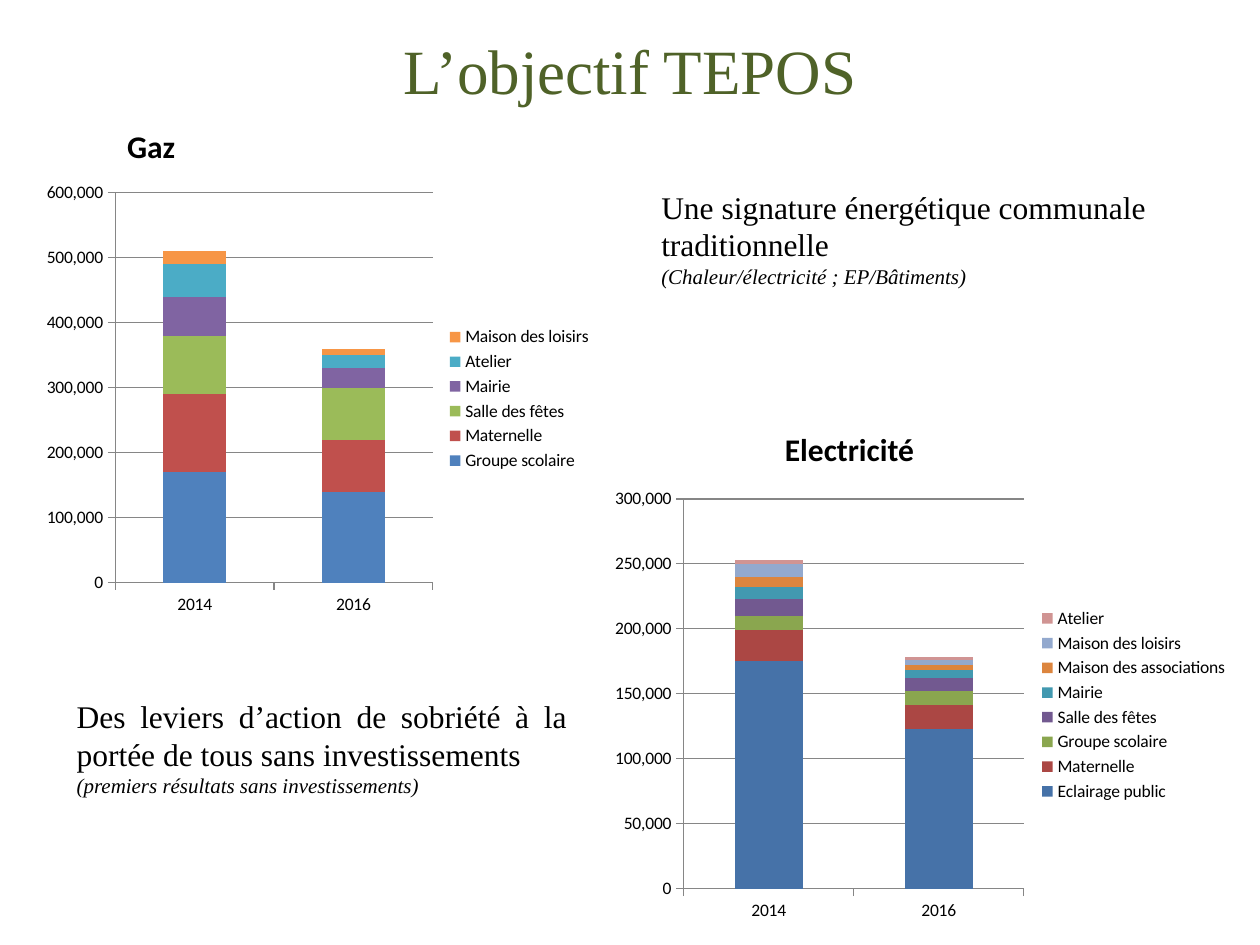
from pptx import Presentation
from pptx import util as u
from pptx.chart import data as chart_data
from pptx.dml import color
from pptx.enum import chart as chart_enum
from pptx.enum import text

COLORS = {
    "title": "4F6228", "text": "000000", "axis": "868686",
    "blue": "4F81BD", "red": "C0504D", "green": "9BBB59",
    "purple": "8064A2", "teal": "4BACC6", "orange": "F79646",
    "dark blue": "4672A8", "dark red": "AB4744", "dark green": "8AA64F",
    "dark purple": "725990", "dark teal": "4299B0", "dark orange": "DC853E",
    "pale blue": "93A9CE", "pale red": "D09493",
}
SERIF, SANS = "Times New Roman", "Calibri"
YEARS = ["2014", "2016"]

# Consumption per building: name, values by year, colour
GAS = [
    ("Groupe scolaire", (170000, 140000), "blue"),
    ("Maternelle", (120000, 80000), "red"),
    ("Salle des fêtes", (90000, 80000), "green"),
    ("Mairie", (60000, 30000), "purple"),
    ("Atelier", (50000, 20000), "teal"),
    ("Maison des loisirs", (20000, 10000), "orange"),
]
ELECTRICITY = [
    ("Eclairage public", (175000, 123000), "dark blue"),
    ("Maternelle", (24000, 18000), "dark red"),
    ("Groupe scolaire", (11000, 11000), "dark green"),
    ("Salle des fêtes", (13000, 10000), "dark purple"),
    ("Mairie", (9000, 6000), "dark teal"),
    ("Maison des associations", (8000, 4000), "dark orange"),
    ("Maison des loisirs", (10000, 4000), "pale blue"),
    ("Atelier", (3000, 2000), "pale red"),
]


def rgb(name):
    return color.RGBColor.from_string(COLORS[name])


class SlideBuilder:
    def __init__(self, slide):
        self.slide = slide

    def style(self, font, size, name, color_name="text"):
        font.size, font.name = u.Pt(size), name
        font.color.rgb = rgb(color_name)

    def text_box(self, box, font_name):
        frame = self.slide.shapes.add_textbox(*map(u.Pt, box)).text_frame
        frame.word_wrap = True
        self.font_name = font_name
        return frame

    def run(self, paragraph, words, size, color_name="text", bold=False, italic=False):
        run = paragraph.add_run()
        run.text = words
        self.style(run.font, size, self.font_name, color_name)
        run.font.bold, run.font.italic = bold, italic

    def title(self, box, words):
        frame = self.text_box(box, SERIF)
        frame.vertical_anchor = text.MSO_ANCHOR.MIDDLE
        paragraph = frame.paragraphs[0]
        paragraph.alignment = text.PP_ALIGN.CENTER
        self.run(paragraph, words, 36, "title")

    def heading(self, box, words):
        frame = self.text_box(box, SANS)
        self.run(frame.paragraphs[0], words, 18, bold=True)

    def comment(self, box, words, detail, alignment=text.PP_ALIGN.LEFT):
        frame = self.text_box(box, SERIF)
        paragraph = frame.paragraphs[0]
        paragraph.alignment = alignment
        self.run(paragraph, words, 18)
        self.run(frame.add_paragraph(), detail, 12, italic=True)

    def stacked_chart(self, box, buildings):
        data = chart_data.CategoryChartData(number_format="#,##0")
        data.categories = YEARS
        for name, values, _ in buildings:
            data.add_series(name, values)
        chart = self.slide.shapes.add_chart(
            chart_enum.XL_CHART_TYPE.COLUMN_STACKED, *map(u.Pt, box), data).chart
        self.style(chart.font, 10, SANS)
        chart.has_title = False
        chart.has_legend = True
        chart.legend.position = chart_enum.XL_LEGEND_POSITION.RIGHT
        chart.legend.include_in_layout = False

        plot = chart.plots[0]
        plot.gap_width, plot.overlap = 150, 100
        plot.vary_by_categories = False
        for series, (_, _, color_name) in zip(plot.series, buildings):
            series.format.fill.solid()
            series.format.fill.fore_color.rgb = rgb(color_name)

        value_axis = chart.value_axis
        value_axis.has_major_gridlines = True
        value_axis.tick_labels.number_format = "#,##0"
        value_axis.tick_labels.number_format_is_linked = False
        for axis in (chart.category_axis, value_axis):
            axis.major_tick_mark = chart_enum.XL_TICK_MARK.OUTSIDE
        for part in (chart.category_axis, value_axis, value_axis.major_gridlines):
            part.format.line.color.rgb = rgb("axis")
            part.format.line.width = u.Pt(0.75)


def main():
    presentation = Presentation()
    presentation.slide_width, presentation.slide_height = u.Pt(720), u.Pt(540)
    builder = SlideBuilder(presentation.slides.add_slide(presentation.slide_layouts[6]))

    # Title
    builder.title((54, 10.8, 612, 57.6), "L’objectif TEPOS")

    # Charts with their headings
    builder.heading((65.5, 69.1, 170, 29), "Gaz")
    builder.heading((441.4, 241.9, 170, 29), "Electricité")
    builder.stacked_chart((344.2, 274.3, 365, 257), ELECTRICITY)
    builder.stacked_chart((20.2, 99.4, 325.4, 257), GAS)

    # Comments
    builder.comment((370.8, 103.7, 311.8, 65.5),
                    "Une signature énergétique communale traditionnelle",
                    "(Chaleur/électricité ; EP/Bâtiments)")
    builder.comment((36.7, 394.6, 294.5, 65.5),
                    "Des leviers d’action de sobriété à la portée de tous sans investissements",
                    "(premiers résultats sans investissements)",
                    text.PP_ALIGN.JUSTIFY)

    presentation.save("out.pptx")


if __name__ == "__main__":
    main()
